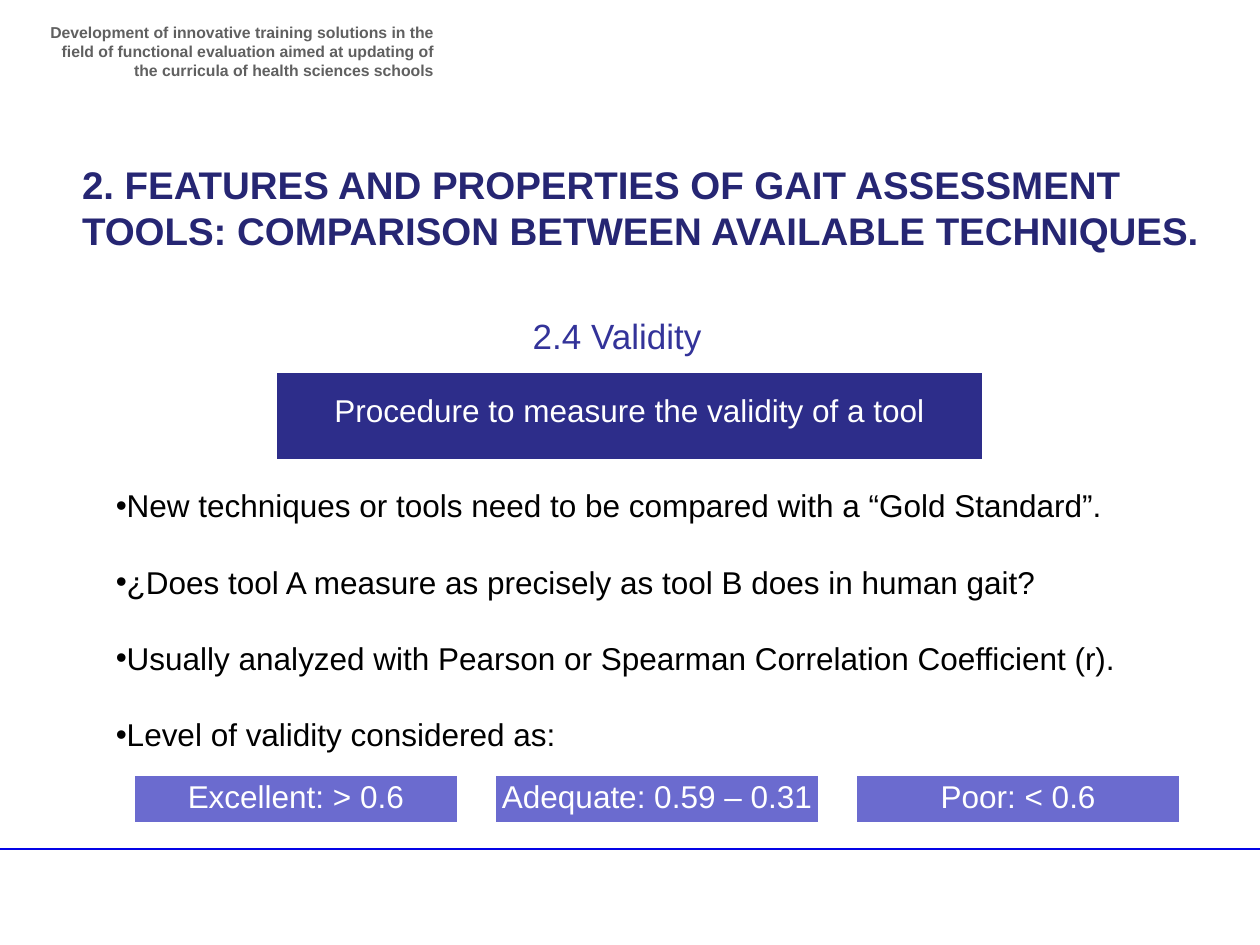
from lxml.etree import SubElement
from pptx import Presentation
from pptx.dml.color import RGBColor
from pptx.enum.shapes import MSO_CONNECTOR, MSO_SHAPE
from pptx.enum.text import MSO_ANCHOR, MSO_AUTO_SIZE, PP_ALIGN
from pptx.oxml.ns import qn
from pptx.util import Cm, Pt

WHITE = RGBColor(0xFF, 0xFF, 0xFF)
BLACK = RGBColor(0x00, 0x00, 0x00)
GREY = RGBColor(0x60, 0x60, 0x60)
NAVY = RGBColor(0x26, 0x26, 0x73)
INDIGO = RGBColor(0x33, 0x33, 0x99)
BANNER_BLUE = RGBColor(0x2D, 0x2D, 0x8A)
LEVEL_BLUE = RGBColor(0x6B, 0x6B, 0xCF)
RULE_BLUE = RGBColor(0x04, 0x04, 0xE6)


def write(frame, lines, size, color, bold=False, anchor=MSO_ANCHOR.TOP, wrap=True, **layout):
    frame.text = "\n".join(lines)
    frame.auto_size = MSO_AUTO_SIZE.NONE
    frame.vertical_anchor = anchor
    frame.word_wrap = wrap
    for index, paragraph in enumerate(frame.paragraphs):
        for name, value in layout.items():
            setattr(paragraph, name, value)
        if index == 0:
            paragraph.space_before = Pt(0)
        for name, value in {"name": "Arial", "size": Pt(size), "bold": bold}.items():
            setattr(paragraph.font, name, value)
        paragraph.font.color.rgb = color


def add_panel(left, top, width, height, fill, text, **layout):
    panel = slide.shapes.add_shape(MSO_SHAPE.RECTANGLE, left, top, width, height)
    panel.shadow.inherit = False
    panel.fill.solid()
    panel.fill.fore_color.rgb = fill
    panel.line.color.rgb = WHITE
    panel.line.width = Pt(2)
    for side in ("left", "top", "right", "bottom"):
        setattr(panel.text_frame, f"margin_{side}", Cm(0.03))
    write(panel.text_frame, [text], 18, WHITE, anchor=MSO_ANCHOR.MIDDLE,
          alignment=PP_ALIGN.CENTER, **layout)


deck = Presentation()
deck.slide_width = Cm(25.4)
deck.slide_height = Cm(19.05)
slide = deck.slides.add_slide(deck.slide_layouts[1])

footer_rule = slide.shapes.add_connector(
    MSO_CONNECTOR.STRAIGHT, Cm(0), Cm(17.12), deck.slide_width, Cm(17.12))
footer_rule.line.color.rgb = RULE_BLUE
footer_rule.line.width = Pt(1)
SubElement(footer_rule._element.spPr, qn("a:effectLst"))

project = slide.shapes.add_textbox(Cm(0.71), Cm(0.33), Cm(8.28), Cm(1.2))
write(project.text_frame, [
    "Development of innovative training solutions in the ﬁeld of functional "
    "evaluation aimed at updating of the curricula of health sciences schools",
], 9, GREY, bold=True, alignment=PP_ALIGN.RIGHT)

heading = slide.shapes.title
points = slide.placeholders[1]
for placeholder, place in (
    (heading, {"left": Cm(1.4), "top": Cm(3.12), "width": Cm(23.09), "height": Cm(2.13)}),
    (points, {"left": Cm(2.08), "top": Cm(9.68), "width": Cm(21.21), "height": Cm(5.64)}),
):
    for name, value in place.items():
        setattr(placeholder, name, value)

write(heading.text_frame, [
    "2. FEATURES AND PROPERTIES OF GAIT ASSESSMENT TOOLS: "
    "COMPARISON BETWEEN AVAILABLE TECHNIQUES.",
], 22, NAVY, bold=True, alignment=PP_ALIGN.LEFT)

section = slide.shapes.add_textbox(Cm(10.49), Cm(6.22), Cm(3.99), Cm(1.2))
write(section.text_frame, ["2.4 Validity"], 20, INDIGO, wrap=False)

add_panel(Cm(5.54), Cm(7.49), Cm(14.3), Cm(1.8), BANNER_BLUE,
          "Procedure to measure the validity of a tool", line_spacing=Pt(14))

write(points.text_frame, [
    "New techniques or tools need to be compared with a “Gold Standard”.",
    "¿Does tool A measure as precisely as tool B does in human gait?",
    "Usually analyzed with Pearson or Spearman Correlation Coefficient (r).",
    "Level of validity considered as:",
], 18, BLACK, space_before=Pt(22))
for point in points.text_frame.paragraphs:
    for name, value in {"marL": Cm(0.22), "indent": -Cm(0.22)}.items():
        point._p.get_or_add_pPr().set(name, str(value))

levels = ["Excellent: > 0.6", "Adequate: 0.59 – 0.31", "Poor: < 0.6"]
for column, level in enumerate(levels):
    add_panel(Cm(2.69 + 7.28 * column), Cm(15.6), Cm(6.55), Cm(1), LEVEL_BLUE,
              level, line_spacing=0.9)

deck.save("out.pptx")
